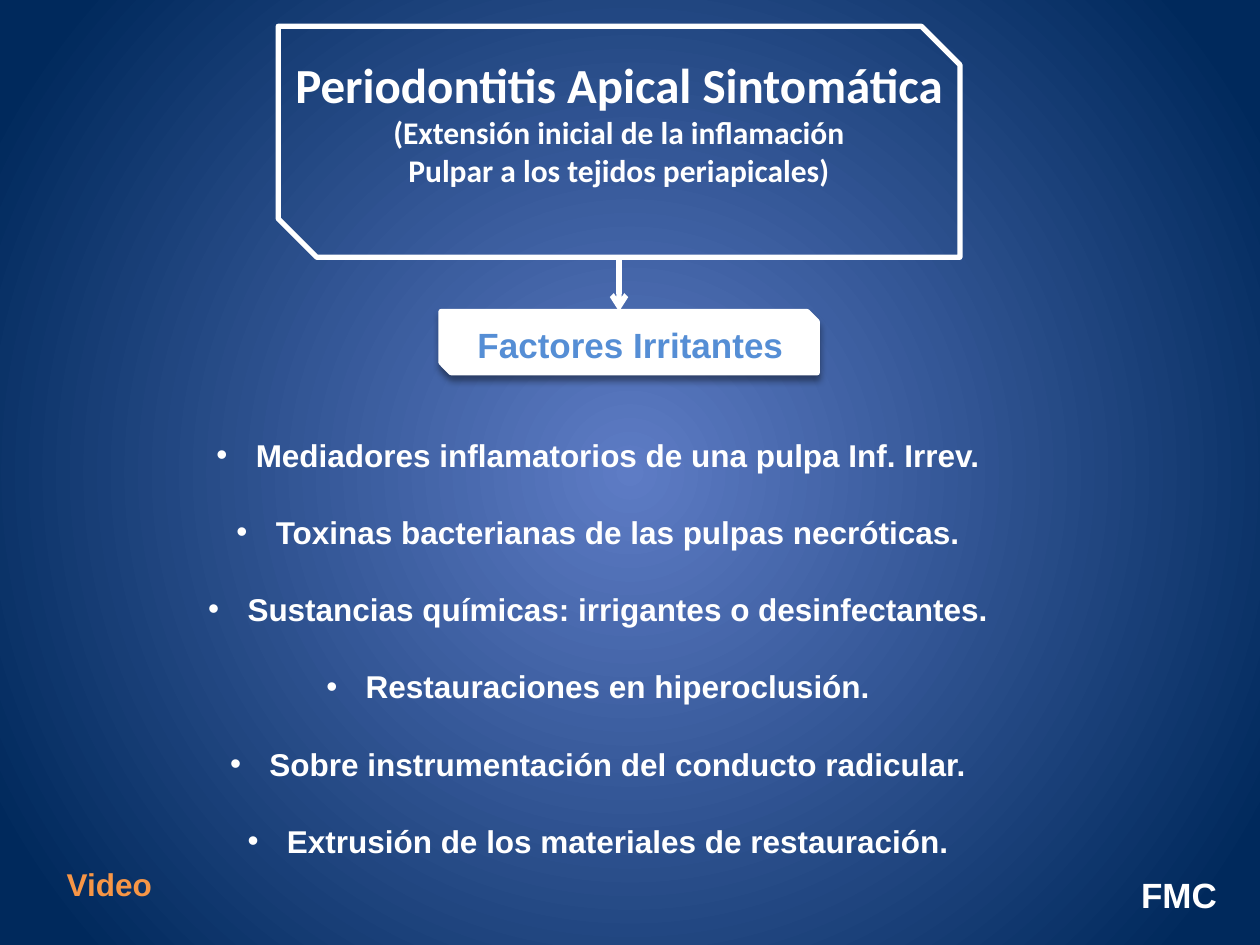
"""Build the slide on symptomatic apical periodontitis and its irritant factors."""
from lxml import etree
from pptx import Presentation
from pptx.dml.color import RGBColor
from pptx.enum.shapes import MSO_CONNECTOR, MSO_SHAPE
from pptx.enum.text import MSO_ANCHOR, PP_ALIGN
from pptx.oxml.ns import qn
from pptx.util import Pt

SNIPPED = MSO_SHAPE.SNIP_2_DIAG_RECTANGLE
STRAIGHT = MSO_CONNECTOR.STRAIGHT
TOP, MIDDLE = MSO_ANCHOR.TOP, MSO_ANCHOR.MIDDLE
LEFT, CENTER, RIGHT = PP_ALIGN.LEFT, PP_ALIGN.CENTER, PP_ALIGN.RIGHT

COLORS = {"glow": "5E7CC5", "navy": "00295C", "white": "FFFFFF",
          "blue": "558ED5", "orange": "F79646", "shadow": "000000"}
TITLE = [("Periodontitis Apical Sintomática", 28),
         ("(Extensión inicial de la inflamación", 18),
         ("Pulpar a los tejidos periapicales)", 18)]
FACTORS = ["Mediadores inflamatorios de una pulpa Inf. Irrev.",
           "Toxinas bacterianas de las pulpas necróticas.",
           "Sustancias químicas: irrigantes o desinfectantes.",
           "Restauraciones en hiperoclusión.",
           "Sobre instrumentación del conducto radicular.",
           "Extrusión de los materiales de restauración."]

HEADER_BOX = (159, 15, 389.5, 132)
BADGE_BOX = (252, 178, 215, 35)
LINE_WIDTH = 3
BULLET_INDENT = 22.5
FACTOR_GAP = 22.5


def rgb(name):
    return RGBColor.from_string(COLORS[name])


def add_xml(parent, tag, **attributes):
    child = etree.SubElement(parent, qn(tag))
    for key, value in attributes.items():
        child.set(key, str(value))
    return child


def paint_background(slide):
    fill = slide.background.fill
    fill.gradient()
    for stop, name, position in zip(fill.gradient_stops, ("glow", "navy"), (0, 0.92)):
        stop.color.rgb = rgb(name)
        stop.position = position
    gradient = slide.background._cSld.find(".//" + qn("a:gradFill"))
    gradient.remove(gradient.find(qn("a:lin")))
    circle = add_xml(gradient, "a:path", path="circle")
    add_xml(circle, "a:fillToRect", l=50000, t=50000, r=50000, b=50000)


def add_snipped(slide, box):
    panel = slide.shapes.add_shape(SNIPPED, *map(Pt, box))
    panel.shadow.inherit = False
    panel.fill.background()
    panel.line.color.rgb = rgb("white")
    panel.line.width = Pt(LINE_WIDTH)
    return panel


def add_drop_shadow(panel):
    effects = panel._element.spPr.find(qn("a:effectLst"))
    shadow = add_xml(effects, "a:outerShdw", blurRad=Pt(4), dist=Pt(3),
                     dir=90 * 60000, rotWithShape=0)
    color = add_xml(shadow, "a:srgbClr", val=COLORS["shadow"])
    add_xml(color, "a:alpha", val=40000)


def add_arrow(slide, x, start, end):
    arrow = slide.shapes.add_connector(STRAIGHT, Pt(x), Pt(start), Pt(x), Pt(end))
    arrow.line.color.rgb = rgb("white")
    arrow.line.width = Pt(LINE_WIDTH)
    add_xml(arrow.line._get_or_add_ln(), "a:tailEnd", type="arrow")
    add_xml(arrow._element.spPr, "a:effectLst")


def add_text(slide, box, lines, color="white", font="Arial", align=CENTER,
             anchor=TOP, wrap=False):
    frame = slide.shapes.add_textbox(*map(Pt, box)).text_frame
    frame.word_wrap = wrap
    frame.vertical_anchor = anchor
    for index, (words, size) in enumerate(lines):
        paragraph = frame.add_paragraph() if index else frame.paragraphs[0]
        paragraph.alignment = align
        run = paragraph.add_run()
        run.text = words
        run.font.name = font
        run.font.size = Pt(size)
        run.font.bold = True
        run.font.color.rgb = rgb(color)
    return frame


def add_bullets(frame):
    for index, paragraph in enumerate(frame.paragraphs):
        paragraph.space_before = Pt(FACTOR_GAP if index else 0)
        properties = paragraph._p.get_or_add_pPr()
        properties.set("marL", str(Pt(BULLET_INDENT)))
        properties.set("indent", str(-Pt(BULLET_INDENT)))
        add_xml(properties, "a:buFont", typeface="Arial")
        add_xml(properties, "a:buChar", char="•")


def main():
    deck = Presentation()
    deck.slide_width, deck.slide_height = Pt(720), Pt(540)
    slide = deck.slides.add_slide(deck.slide_layouts[6])
    paint_background(slide)

    badge = add_snipped(slide, BADGE_BOX)
    badge.fill.solid()
    badge.fill.fore_color.rgb = rgb("white")
    add_drop_shadow(badge)
    add_snipped(slide, HEADER_BOX)

    left, top, width, height = HEADER_BOX
    add_text(slide, (left, 27.5, width, 85), TITLE, font="Calibri")
    add_text(slide, (265, 181.5, 190.5, 31.5), [("Factores Irritantes", 20)], "blue")
    add_text(slide, (640, 497, 62.5, 28.5), [("FMC", 20)],
             align=RIGHT, anchor=MIDDLE, wrap=True)
    factors = add_text(slide, (109.5, 245.5, 464.5, 291),
                       [(factor, 18) for factor in FACTORS])
    add_bullets(factors)
    add_arrow(slide, left + width / 2, top + height, BADGE_BOX[1])
    add_text(slide, (31, 491, 63.5, 29), [("Video", 18)], "orange", align=LEFT)

    deck.save("out.pptx")


if __name__ == "__main__":
    main()
